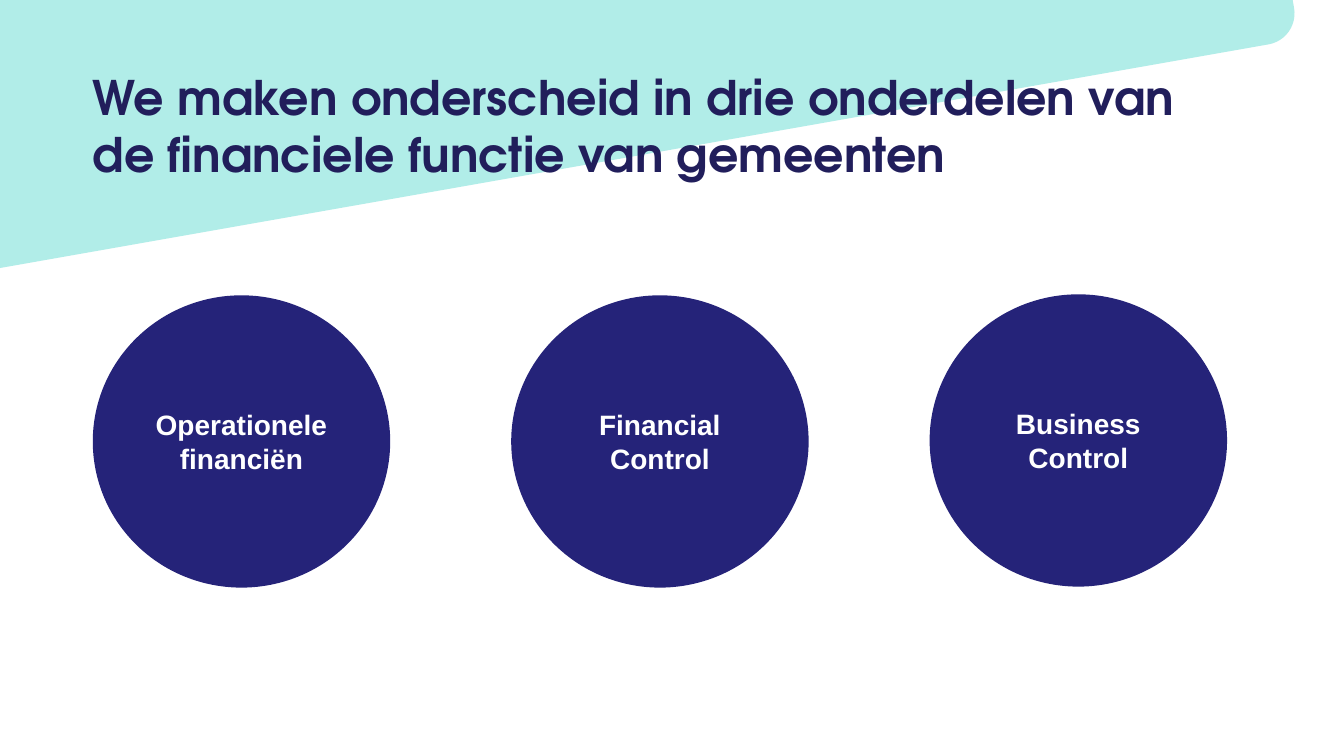
from dataclasses import dataclass

from pptx import Presentation
from pptx.dml.color import RGBColor
from pptx.enum.shapes import MSO_SHAPE
from pptx.enum.text import MSO_ANCHOR, PP_ALIGN
from pptx.shapes.autoshape import Shape
from pptx.slide import Slide
from pptx.text.text import TextFrame
from pptx.util import Emu, Pt

ROUND_RECT, ELLIPSE = MSO_SHAPE.ROUNDED_RECTANGLE, MSO_SHAPE.OVAL
MIDDLE, CENTER = MSO_ANCHOR.MIDDLE, PP_ALIGN.CENTER

PX = 9144  # 100 px to the inch
COLORS = {"band": "B1EDE8", "title": "211E5B", "circle": "252379", "label": "FFFFFF"}
TITLE_FONT, BODY_FONT = "TeX Gyre Adventor", "Arial"

LEFT, STEP = 92, 415
CIRCLE_W, CIRCLE_H = 295, 290


@dataclass
class Circle:
    label: str
    top: int


CIRCLES = [
    Circle("Operationele financiën", 293),
    Circle("Financial Control", 293),
    Circle("Business Control", 292),
]


def px(n: int) -> Emu:
    return Emu(n * PX)


def color(name: str) -> RGBColor:
    return RGBColor.from_string(COLORS[name])


def add_filled(s: Slide, kind: MSO_SHAPE, x: int, y: int, w: int, h: int, fill: str) -> Shape:
    sp = s.shapes.add_shape(kind, px(x), px(y), px(w), px(h))
    sp.shadow.inherit = False
    sp.fill.solid()
    sp.fill.fore_color.rgb = color(fill)
    sp.line.fill.background()
    return sp


def write(tf: TextFrame, text: str, font: str, size: int, ink: str) -> None:
    tf.word_wrap = True
    tf.text = text
    f = tf.paragraphs[0].runs[0].font
    f.name, f.size, f.bold = font, Pt(size), True
    f.color.rgb = color(ink)


def add_circle(s: Slide, circle: Circle, x: int) -> None:
    sp = add_filled(s, ELLIPSE, x, circle.top, CIRCLE_W, CIRCLE_H, "circle")
    tf = sp.text_frame
    write(tf, circle.label, BODY_FONT, 20, "label")
    tf.vertical_anchor = MIDDLE
    tf.paragraphs[0].alignment = CENTER


def add_title(s: Slide, text: str) -> None:
    tf = s.shapes.add_textbox(px(LEFT), px(67), px(1125), px(132)).text_frame
    tf.margin_left = tf.margin_top = tf.margin_right = tf.margin_bottom = 0
    write(tf, text, TITLE_FONT, 34, "title")


def main() -> None:
    prs = Presentation()
    prs.slide_width, prs.slide_height = px(1333), px(750)
    s = prs.slides.add_slide(prs.slide_layouts[6])

    # Tilted band behind the title
    band = add_filled(s, ROUND_RECT, -75, -109, 1351, 267, "band")
    band.adjustments[0] = 0.117
    band.rotation = 350

    # Title
    add_title(s, "We maken onderscheid in drie onderdelen van de financiele functie van gemeenten")

    # Three parts of the finance function
    for i, circle in enumerate(CIRCLES):
        add_circle(s, circle, LEFT + i * STEP)

    prs.save("out.pptx")


if __name__ == "__main__":
    main()
